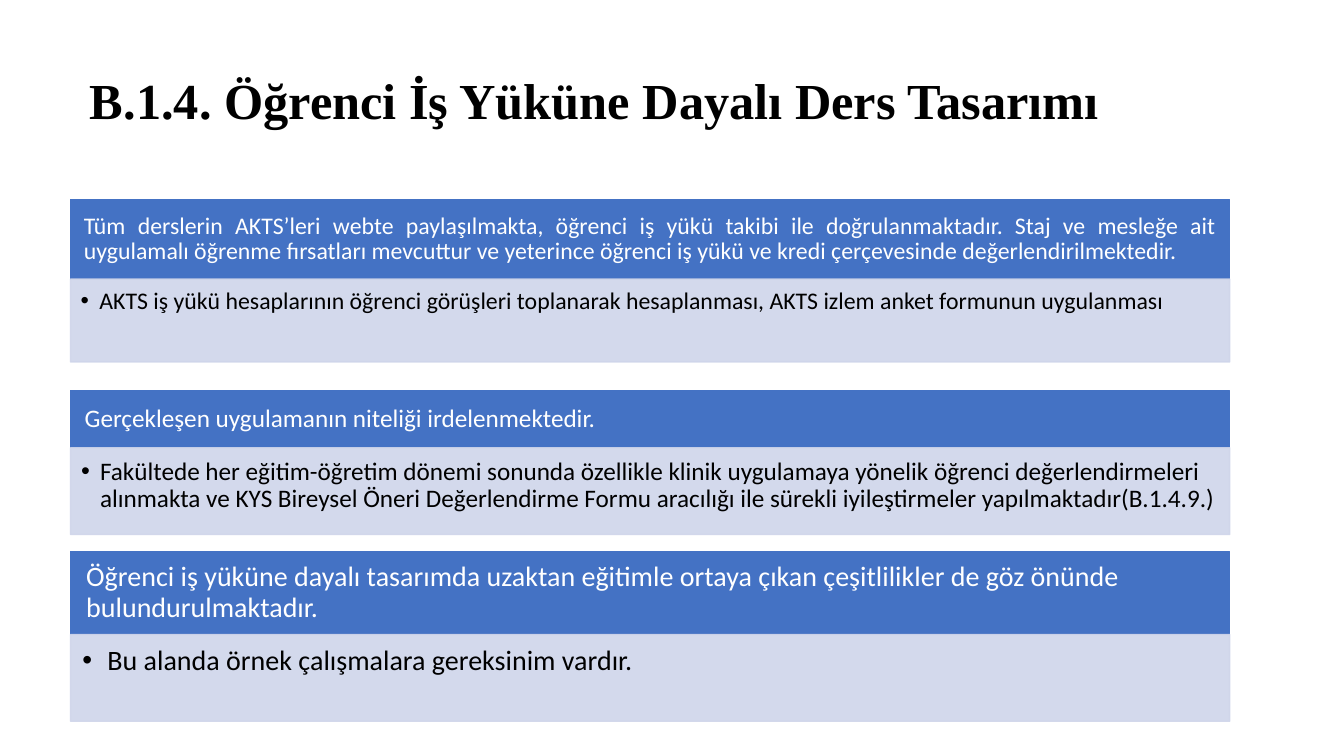
from dataclasses import dataclass

from lxml import etree
from pptx import Presentation
from pptx.dml.color import RGBColor
from pptx.enum import shapes, text
from pptx.oxml import ns
from pptx.util import Pt


@dataclass(frozen=True)
class Theme:
    ink: str = "000000"
    header_fill: str = "4472C4"
    header_ink: str = "FFFFFF"
    detail_fill: str = "CFD5EA"
    detail_opacity: int = 90
    title_font: str = "Times New Roman"
    body_font: str = "Calibri"
    title_size: int = 36
    line_spacing: float = 0.9


class SlideBuilder:
    def __init__(self, slide, theme):
        self.slide = slide
        self.theme = theme

    def _style(self, p, font, size, color, bold=False):
        p.line_spacing = self.theme.line_spacing
        for r in p.runs:
            r.font.name = font
            r.font.size = Pt(size)
            r.font.bold = bold
            r.font.color.rgb = RGBColor.from_string(color)

    def title(self, words, left, top, width, height):
        sp = self.slide.shapes.title
        sp.left, sp.top, sp.width, sp.height = map(Pt, (left, top, width, height))
        tf = sp.text_frame
        tf.text = words
        tf.auto_size = text.MSO_AUTO_SIZE.NONE
        tf.vertical_anchor = text.MSO_ANCHOR.MIDDLE
        p = tf.paragraphs[0]
        p.alignment = text.PP_ALIGN.LEFT
        self._style(p, self.theme.title_font, self.theme.title_size, self.theme.ink, bold=True)

    def _band(self, words, box, fill, ink, size, insets, anchor, align):
        """Draw a filled bar; insets are left, top, right, bottom per point of type."""
        sp = self.slide.shapes.add_shape(shapes.MSO_SHAPE.RECTANGLE, *map(Pt, box))
        sp.shadow.inherit = False
        sp.line.width = Pt(1)
        for paint in (sp.fill, sp.line.fill):
            paint.solid()
            paint.fore_color.rgb = RGBColor.from_string(fill)
        tf = sp.text_frame
        tf.text = words
        tf.word_wrap = True
        tf.vertical_anchor = anchor
        tf.margin_left, tf.margin_top, tf.margin_right, tf.margin_bottom = (
            Pt(size * inset) for inset in insets)
        p = tf.paragraphs[0]
        p.alignment = align
        self._style(p, self.theme.body_font, size, ink)
        return sp

    def header(self, words, box, size, align):
        self._band(words, box, self.theme.header_fill, self.theme.header_ink, size,
                   (0.56, 0.32, 0.56, 0.32), text.MSO_ANCHOR.MIDDLE, align)

    def detail(self, words, box, size, indent):
        sp = self._band(words, box, self.theme.detail_fill, self.theme.ink, size,
                        (0.42, 0.42, 0.56, 0.63), text.MSO_ANCHOR.TOP, text.PP_ALIGN.LEFT)
        for color in sp._element.spPr.iter(ns.qn("a:srgbClr")):
            etree.SubElement(color, ns.qn("a:alpha"), val=str(self.theme.detail_opacity * 1000))
        pPr = sp.text_frame.paragraphs[0]._p.get_or_add_pPr()
        pPr.set("marL", str(Pt(indent)))
        pPr.set("indent", str(-Pt(indent)))
        etree.SubElement(pPr, ns.qn("a:buFont"), typeface="Arial")
        etree.SubElement(pPr, ns.qn("a:buChar"), char="•")


LEFT, WIDTH = 50.4, 828
JUSTIFY, START = text.PP_ALIGN.JUSTIFY, text.PP_ALIGN.LEFT

# top, header height, detail height, type size, bullet indent, header alignment, header, detail
SECTIONS = [
    (142.4, 57, 59.2, 17, 13.5, JUSTIFY,
     "Tüm derslerin AKTS’leri webte paylaşılmakta, öğrenci iş yükü takibi ile doğrulanmaktadır. "
     "Staj ve mesleğe ait uygulamalı öğrenme fırsatları mevcuttur ve yeterince öğrenci iş yükü "
     "ve kredi çerçevesinde değerlendirilmektedir.",
     "AKTS iş yükü hesaplarının öğrenci görüşleri toplanarak hesaplanması, "
     "AKTS izlem anket formunun uygulanması"),
    (278.8, 41, 62, 18, 13.5, START,
     "Gerçekleşen uygulamanın niteliği irdelenmektedir.",
     "Fakültede her eğitim-öğretim dönemi sonunda özellikle klinik uygulamaya yönelik öğrenci "
     "değerlendirmeleri alınmakta ve KYS Bireysel Öneri Değerlendirme Formu aracılığı ile "
     "sürekli iyileştirmeler yapılmaktadır(B.1.4.9.)"),
    (393.8, 59.4, 62, 20, 18, START,
     "Öğrenci iş yüküne dayalı tasarımda uzaktan eğitimle ortaya çıkan çeşitlilikler de "
     "göz önünde bulundurulmaktadır.",
     "Bu alanda örnek çalışmalara gereksinim vardır."),
]


def main():
    prs = Presentation()
    prs.slide_width, prs.slide_height = Pt(960), Pt(540)
    title_only = prs.slide_layouts[5]
    builder = SlideBuilder(prs.slides.add_slide(title_only), Theme())
    builder.title("B.1.4. Öğrenci İş Yüküne Dayalı Ders Tasarımı", 57, 28.8, 836.6, 90)
    for top, header_h, detail_h, size, indent, align, header, detail in SECTIONS:
        builder.header(header, (LEFT, top, WIDTH, header_h), size, align)
        builder.detail(detail, (LEFT, top + header_h, WIDTH, detail_h), size, indent)
    prs.save("out.pptx")


if __name__ == "__main__":
    main()
